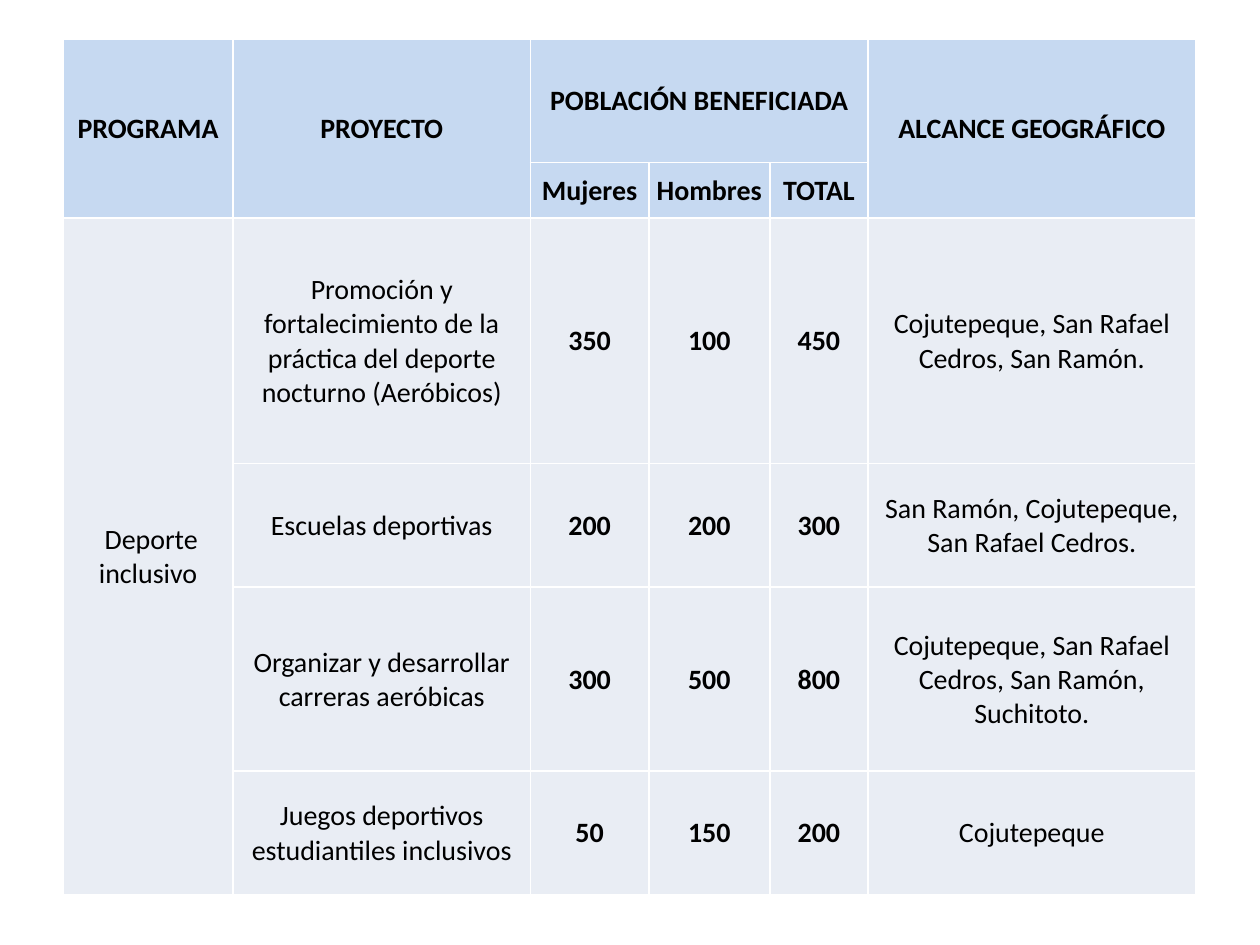
from lxml import etree
from pptx import Presentation
from pptx.dml.color import RGBColor
from pptx.enum.text import MSO_ANCHOR, PP_ALIGN
from pptx.oxml.ns import qn
from pptx.util import Inches, Pt

MIDDLE = MSO_ANCHOR.MIDDLE
CENTER = PP_ALIGN.CENTER
COLORS = {"header": "C6D9F1", "body": "E9EDF4", "border": "FFFFFF", "text": "000000"}
HEADER_ROWS = 2
NUMBER_COLS = (2, 3, 4)

col_widths = [1.35, 2.36, 0.94, 0.96, 0.78, 2.6]
row_heights = [0.98, 0.44, 1.95, 0.98, 1.46, 0.98]
rows = [
    ["PROGRAMA", "PROYECTO", "POBLACIÓN BENEFICIADA", "", "", "ALCANCE GEOGRÁFICO"],
    ["", "", "Mujeres", "Hombres", "TOTAL", ""],
    [" Deporte inclusivo",
     "Promoción y fortalecimiento de la práctica del deporte nocturno (Aeróbicos)",
     "350", "100", "450", "Cojutepeque, San Rafael Cedros, San Ramón."],
    ["", "Escuelas deportivas", "200", "200", "300",
     "San Ramón, Cojutepeque, San Rafael Cedros."],
    ["", "Organizar y desarrollar carreras aeróbicas", "300", "500", "800",
     "Cojutepeque, San Rafael Cedros, San Ramón, Suchitoto."],
    ["", "Juegos deportivos estudiantiles inclusivos", "50", "150", "200", "Cojutepeque"],
]
merges = [((0, 0), (1, 0)), ((0, 1), (1, 1)), ((0, 2), (0, 4)),
          ((0, 5), (1, 5)), ((2, 0), (5, 0))]


def add_borders(cell):
    tcPr = cell._tc.get_or_add_tcPr()
    for side in ("a:lnL", "a:lnR", "a:lnT", "a:lnB"):
        ln = etree.SubElement(tcPr, qn(side), w=str(Pt(1)))
        fill = etree.SubElement(ln, qn("a:solidFill"))
        etree.SubElement(fill, qn("a:srgbClr"), val=COLORS["border"])


prs = Presentation()
prs.slide_width = Inches(10)
prs.slide_height = Inches(7.5)
s = prs.slides.add_slide(prs.slide_layouts[6])

table = s.shapes.add_table(len(rows), len(col_widths), Inches(0.5), Inches(0.31),
                           Inches(sum(col_widths)), Inches(sum(row_heights))).table
for col, width in zip(table.columns, col_widths):
    col.width = Inches(width)
for row, height in zip(table.rows, row_heights):
    row.height = Inches(height)
for first, last in merges:
    table.cell(*first).merge(table.cell(*last))

for i, row in enumerate(rows):
    is_header = i < HEADER_ROWS
    for j, text in enumerate(row):
        cell = table.cell(i, j)
        add_borders(cell)
        cell.fill.solid()
        cell.fill.fore_color.rgb = RGBColor.from_string(COLORS["header" if is_header else "body"])
        cell.vertical_anchor = MIDDLE
        cell.margin_left = cell.margin_right = cell.margin_top = Inches(0.01)
        cell.margin_bottom = 0
        if not text:
            continue
        cell.text = text
        p = cell.text_frame.paragraphs[0]
        p.alignment = CENTER
        p.font.name = "Calibri"
        p.font.size = Pt(16)
        p.font.bold = is_header or j in NUMBER_COLS
        p.font.color.rgb = RGBColor.from_string(COLORS["text"])

prs.save("out.pptx")
